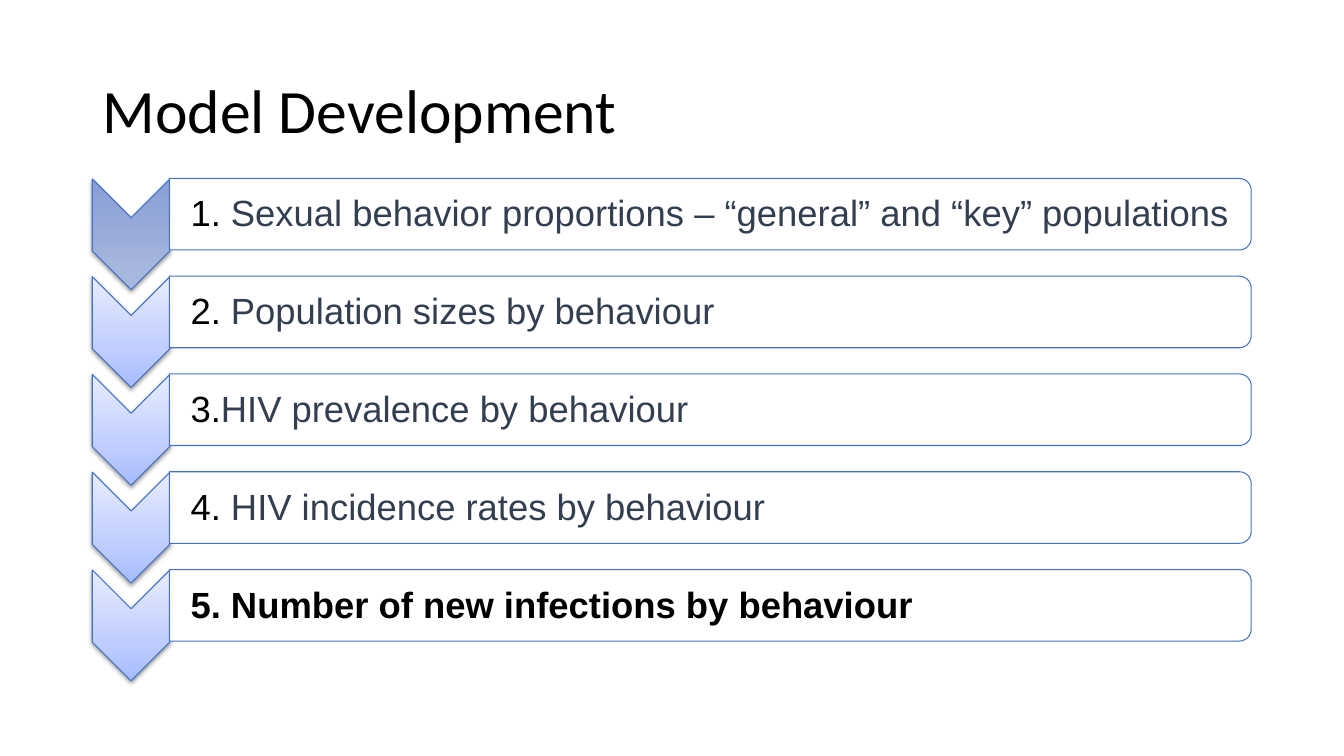
from pptx import Presentation
from pptx.dml.color import RGBColor
from pptx.enum.dml import MSO_FILL
from pptx.enum.shapes import MSO_SHAPE
from pptx.enum.text import MSO_ANCHOR, PP_ALIGN
from pptx.oxml import parse_xml
from pptx.oxml.ns import nsdecls, qn
from pptx.util import Inches, Pt
from lxml.etree import SubElement

HEX = {"black": "000000", "white": "FFFFFF", "line": "4472C4", "text": "333F50"}
FIRST = [(0, "A8B7DF"), (21, "A7B6DE"), (50, "9AABD9"), (100, "889ED7")]
LATER = [(0, "A6BBFF"), (35, "C0CEFF"), (100, "E7ECFF")]
STEPS = [
    " Sexual behavior proportions – “general” and “key” populations",
    " Population sizes by behaviour",
    "HIV prevalence by behaviour",
    " HIV incidence rates by behaviour",
    " Number of new infections by behaviour",
]
PITCH = 0.97


def add_turned(group, kind, left, top, width, height):
    """Add an outlined shape turned a quarter to the right."""
    shape = group.shapes.add_shape(
        kind, Inches(left), Inches(top), Inches(width), Inches(height))
    shape.rotation = 90
    shape.shadow.inherit = False
    shape.line.color.rgb = RGBColor.from_string(HEX["line"])
    shape.line.width = Pt(0.75)
    return shape


def add_run(para, text, font, size, color, bold=False):
    run = para.add_run()
    run.text = text
    run.font.name = font
    run.font.size = Pt(size)
    run.font.bold = bold
    run.font.color.rgb = RGBColor.from_string(HEX[color])


deck = Presentation()
deck.slide_width, deck.slide_height = Inches(13.33), Inches(7.5)
slide = deck.slides.add_slide(deck.slide_layouts[5])

# Title
title = slide.shapes.title
title.left, title.top = Inches(0.92), Inches(0.4)
title.width, title.height = Inches(11.5), Inches(1.45)
title.text_frame.vertical_anchor = MSO_ANCHOR.MIDDLE
para = title.text_frame.paragraphs[0]
para.alignment = PP_ALIGN.LEFT
para.line_spacing = 0.9
add_run(para, "Model Development", "Calibri", 44, "black")

# Chevron list
group = slide.shapes.add_group_shape()
for i, step in enumerate(STEPS):
    drop = i * PITCH
    last = i == len(STEPS) - 1

    # Chevron with upright gradient and soft shadow
    arrow = add_turned(group, MSO_SHAPE.CHEVRON, 0.75, 1.94 + drop, 1.1, 0.77)
    arrow.fill.gradient()
    props = arrow._element.spPr
    stops = "".join(
        f'<a:gs pos="{pos * 1000}"><a:srgbClr val="{color}"/></a:gs>'
        for pos, color in (LATER if i else FIRST))
    props.replace(props.find(qn("a:gradFill")), parse_xml(
        f'<a:gradFill {nsdecls("a")} rotWithShape="0"><a:gsLst>{stops}</a:gsLst>'
        '<a:lin ang="16200000" scaled="0"/></a:gradFill>'))
    props.find(qn("a:effectLst")).append(parse_xml(
        f'<a:outerShdw {nsdecls("a")} blurRad="{Pt(3.1)}" dist="{Pt(1.6)}" '
        f'dir="5400000" rotWithShape="0"><a:srgbClr val="{HEX["black"]}">'
        '<a:alpha val="38000"/></a:srgbClr></a:outerShdw>'))

    # Bar with rounded right end
    bar = add_turned(group, MSO_SHAPE.ROUND_2_SAME_RECTANGLE,
                     6.69, -3.24 + drop, 0.71, 10.73)
    bar.fill.solid()
    bar.fill.fore_color.rgb = RGBColor.from_string(HEX["white"])
    tint = bar._element.spPr.find(qn("a:solidFill"))[0]
    SubElement(tint, qn("a:alpha"), val="90000")

    # Numbered label
    label = group.shapes.add_textbox(
        Inches(1.69), Inches(1.81 + drop), Inches(10.7), Inches(0.65))
    frame = label.text_frame
    frame.word_wrap = True
    frame.vertical_anchor = MSO_ANCHOR.MIDDLE
    frame.margin_left = Inches(0.2)
    frame.margin_right = frame.margin_top = frame.margin_bottom = Inches(0.02)
    para = frame.paragraphs[0]
    para.level = 1
    para.line_spacing = 0.9
    add_run(para, step, "Arial", 26, "black" if last else "text", last)
    ppr = para._p.get_or_add_pPr()
    ppr.set("marL", str(Inches(0.25)))
    ppr.set("indent", str(Inches(-0.25)))
    after = SubElement(ppr, qn("a:spcAft"))
    SubElement(after, qn("a:spcPct"), val="15000")
    tone = SubElement(ppr, qn("a:buClr"))
    SubElement(tone, qn("a:srgbClr"), val=HEX["black"])
    SubElement(ppr, qn("a:buFont"), typeface="Arial")
    SubElement(ppr, qn("a:buAutoNum"), type="arabicPeriod", startAt=str(i + 1))

deck.save("out.pptx")
